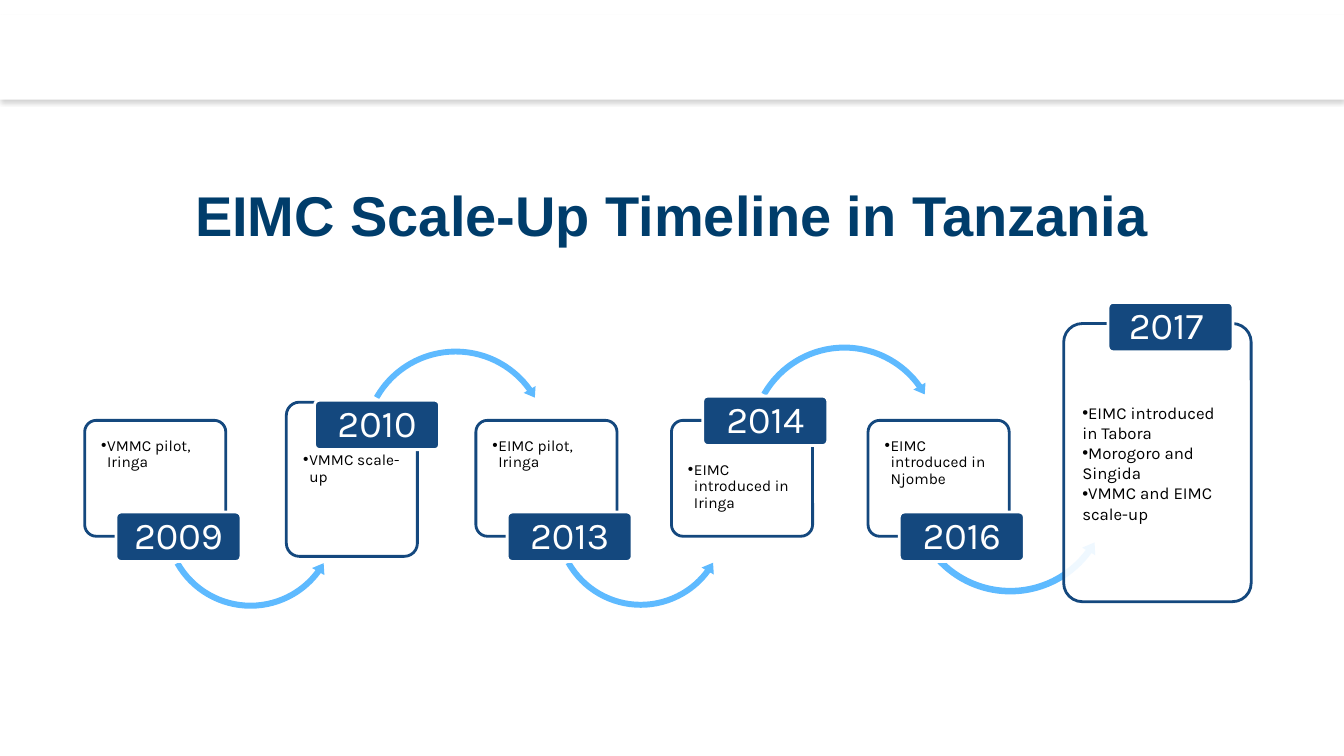
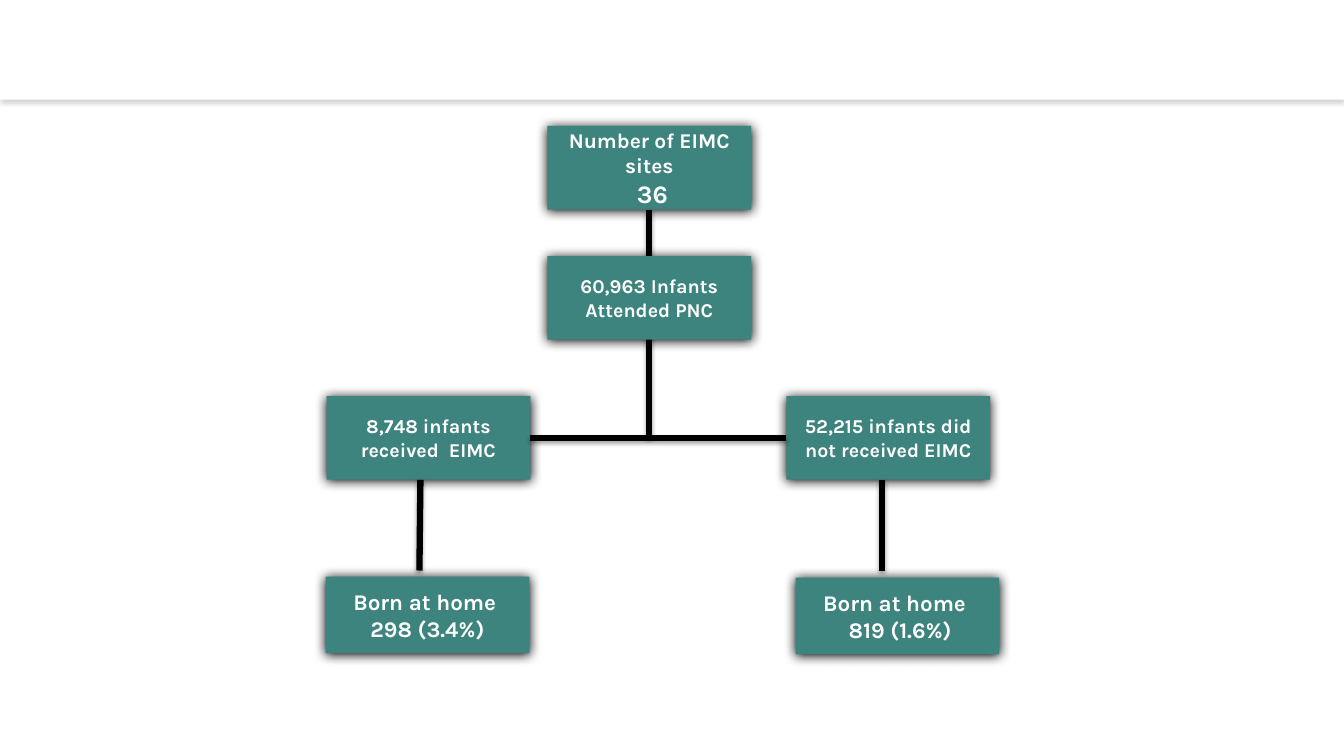
from dataclasses import dataclass
from typing import NamedTuple

from lxml.etree import SubElement
from pptx import Presentation
from pptx.dml.color import RGBColor
from pptx.enum.shapes import MSO_CONNECTOR, MSO_SHAPE
from pptx.enum.text import MSO_ANCHOR, PP_ALIGN
from pptx.oxml.ns import qn
from pptx.util import Inches, Pt


# Shared look
class Shade(NamedTuple):
    color: str
    alpha: int
    blur: float
    dist: float


@dataclass(frozen=True)
class Theme:
    white: str = "FFFFFF"
    black: str = "000000"
    navy: str = "14487E"
    sky: str = "5EBAFF"
    teal: str = "3C847D"
    head: str = "003D6B"
    font: str = "Karla"
    title_font: str = "Arial"
    title: int = 40
    year: int = 27
    note: int = 11
    rule: float = 4.5
    edge: float = 2
    soft: Shade = Shade("808080", 35, 3.1, 1.8)
    line: Shade = Shade("000000", 35, 3.1, 1.8)
    deep: Shade = Shade("000000", 100, 8.5, 1)


THEME = Theme()


class Box(NamedTuple):
    left: float
    top: float
    width: float
    height: float


class Para(NamedTuple):
    text: str
    size: float


# Timeline data
class Arrow(NamedTuple):
    left: float
    top: float
    size: float
    kind: MSO_SHAPE
    adj: tuple[float, ...]


class Event(NamedTuple):
    year: str
    notes: tuple[str, ...]
    card: Box
    tag: tuple[float, float]
    arrow: Arrow | None = None
    pad: float = 0.14
    size: float = THEME.note
    hang: float = 0.06
    space: float = 0.9


UNDER, OVER = MSO_SHAPE.LEFT_CIRCULAR_ARROW, MSO_SHAPE.CIRCULAR_ARROW
DIP = (0.033, 4.091, 21.86, 90.26, 0.039)
LAST_DIP = (0.031, 3.809, 21.763, 90.444, 0.036)
RISE = (0.03, 3.643, 194.62, 125.77, 0.035)

EVENTS = (
    Event("2009", ("VMMC pilot, Iringa",), Box(0.84, 4.17, 1.4, 1.15),
          (1.15, 5.08), Arrow(1.58, 4.27, 1.81, UNDER, DIP)),
    Event("2010", ("VMMC scale-up",), Box(2.84, 3.99, 1.3, 1.53),
          (3.12, 3.97), Arrow(3.55, 3.42, 1.94, OVER, RISE), pad=0.46),
    Event("2013", ("EIMC pilot, Iringa",), Box(4.72, 4.17, 1.4, 1.15),
          (5.03, 5.08), Arrow(5.46, 4.28, 1.79, UNDER, DIP)),
    Event("2014", ("EIMC introduced in Iringa",), Box(6.66, 4.17, 1.4, 1.15),
          (6.97, 3.93), Arrow(7.39, 3.38, 1.97, OVER, RISE), pad=0.38),
    Event("2016", ("EIMC introduced in Njombe",), Box(8.61, 4.17, 1.4, 1.15),
          (8.92, 5.08), Arrow(8.98, 3.86, 2.08, UNDER, LAST_DIP)),
    Event("2017", ("EIMC introduced in Tabora", "Morogoro and Singida",
                   "VMMC and EIMC scale-up"), Box(10.55, 3.21, 1.86, 2.76),
          (10.99, 3), pad=0.73, size=12, hang=0, space=1),
)


# Drawing helpers
def rgb(color: str) -> RGBColor:
    return RGBColor.from_string(color)


def apply(item, values: dict) -> None:
    for name, value in values.items():
        setattr(item, name, value)


def add_shade(props, shade: Shade) -> None:
    """Put an outer shadow, cast straight down, in shape properties."""
    effects = props.find(qn("a:effectLst"))
    if effects is None:
        effects = SubElement(props, qn("a:effectLst"))
    outer = SubElement(effects, qn("a:outerShdw"), {
        "blurRad": str(Pt(shade.blur)), "dist": str(Pt(shade.dist)),
        "dir": "5400000", "algn": "ctr", "rotWithShape": "0"})
    color = SubElement(outer, qn("a:srgbClr"), val=shade.color)
    SubElement(color, qn("a:alpha"), val=str(shade.alpha * 1000))


def add_box(slide, kind: MSO_SHAPE, box: Box, fill: str,
            edge: str | None = None, shade: Shade | None = None,
            alpha: int | None = None):
    shape = slide.shapes.add_shape(kind, *map(Inches, box))
    shape.shadow.inherit = False
    shape.fill.solid()
    shape.fill.fore_color.rgb = rgb(fill)
    if alpha is not None:
        color = shape.fill._xPr.find(qn("a:solidFill"))[0]
        SubElement(color, qn("a:alpha"), val=str(alpha * 1000))
    if edge:
        shape.line.color.rgb = rgb(edge)
        shape.line.width = Pt(THEME.edge)
    else:
        shape.line.fill.background()
    if shade:
        add_shade(shape._element.spPr, shade)
    return shape


def set_text(shape, paras: list[Para], color: str, frame: dict,
             form: dict, font: dict, hang: float | None = None) -> None:
    text = shape.text_frame
    apply(text, {"word_wrap": True} | frame)
    for i, item in enumerate(paras):
        para = text.add_paragraph() if i else text.paragraphs[0]
        if hang is not None:
            props = para._p.get_or_add_pPr()
            props.set("marL", str(Inches(hang)))
            props.set("indent", str(-Inches(hang)))
            SubElement(props, qn("a:buFont"), typeface=THEME.title_font)
            SubElement(props, qn("a:buChar"), char="•")
        apply(para, form)
        run = para.add_run()
        run.text = item.text
        apply(run.font, {"name": THEME.font, "size": Pt(item.size)} | font)
        run.font.color.rgb = rgb(color)


def insets(side: float, top: float, bottom: float) -> dict:
    return {"margin_left": Inches(side), "margin_right": Inches(side),
            "margin_top": Inches(top), "margin_bottom": Inches(bottom)}


def add_page(deck, layout: int):
    slide = deck.slides.add_slide(deck.slide_layouts[layout])
    add_box(slide, MSO_SHAPE.RECTANGLE, Box(0, 0.15, 13.33, 0.84),
            THEME.white, shade=THEME.soft)
    return slide


def add_event(slide, event: Event) -> None:
    card = add_box(slide, MSO_SHAPE.ROUNDED_RECTANGLE, event.card,
                   THEME.white, THEME.navy, alpha=90)
    card.adjustments[0] = 0.1
    set_text(card, [Para(note, event.size) for note in event.notes],
             THEME.black,
             insets(0.13, event.pad, 0.14) | {"vertical_anchor": MSO_ANCHOR.TOP},
             {"alignment": PP_ALIGN.LEFT, "line_spacing": event.space},
             {}, event.hang)
    if event.arrow:
        left, top, size, kind, adj = event.arrow
        arrow = add_box(slide, kind, Box(left, top, size, size), THEME.sky)
        for i, value in enumerate(adj):
            arrow.adjustments[i] = value
    tag = add_box(slide, MSO_SHAPE.ROUNDED_RECTANGLE,
                  Box(*event.tag, 1.24, 0.49), THEME.navy, THEME.white)
    tag.adjustments[0] = 0.1
    # The last year carries a trailing space, which shifts it left
    year = event.year if event.arrow else event.year + " "
    set_text(tag, [Para(year, THEME.year)], THEME.white,
             insets(0.06, 0.04, 0.04) | {"vertical_anchor": MSO_ANCHOR.MIDDLE},
             {"alignment": PP_ALIGN.CENTER, "line_spacing": 0.9}, {})


def add_node(slide, left: float, top: float, *paras: Para,
             height: float = 0.83):
    node = add_box(slide, MSO_SHAPE.RECTANGLE, Box(left, top, 2.02, height),
                   THEME.teal, shade=THEME.deep)
    set_text(node, list(paras), THEME.white,
             {"vertical_anchor": MSO_ANCHOR.MIDDLE},
             {"alignment": PP_ALIGN.CENTER}, {"bold": True})
    return node


def add_rule(slide, x1: float, y1: float, x2: float, y2: float):
    rule = slide.shapes.add_connector(
        MSO_CONNECTOR.STRAIGHT, *map(Inches, (x1, y1, x2, y2)))
    rule.line.color.rgb = rgb(THEME.black)
    rule.line.width = Pt(THEME.rule)
    add_shade(rule._element.spPr, THEME.line)
    return rule


# Slides
def add_timeline(deck) -> None:
    slide = add_page(deck, 5)
    for event in EVENTS:
        add_event(slide, event)
    title = slide.shapes.title
    apply(title, {"left": Inches(0.66), "top": Inches(1.5),
                  "width": Inches(12), "height": Inches(1.25)})
    set_text(title, [Para("EIMC Scale-Up Timeline in Tanzania", THEME.title)],
             THEME.head, {"vertical_anchor": MSO_ANCHOR.MIDDLE},
             {"alignment": PP_ALIGN.CENTER},
             {"name": THEME.title_font, "bold": True})


def add_flow(deck) -> None:
    slide = add_page(deck, 6)
    add_node(slide, 3.23, 5.72, Para("Born at home ", 16),
             Para("298 (3.4%)", 16), height=0.76)
    add_node(slide, 7.89, 5.73, Para("Born at home ", 16),
             Para(" 819 (1.6%)", 16), height=0.76)
    sites = add_node(slide, 5.43, 1.25, Para("Number of EIMC sites", 15),
                     Para(" 36", 18))
    done = add_node(slide, 3.24, 3.93, Para("8,748 infants received  EIMC", 14))
    missed = add_node(slide, 7.8, 3.93,
                      Para("52,215 infants did not received EIMC", 14))

    # Lines; the trunk runs behind the middle box
    for top, foot in ((4.17, 4.16), (8.75, 8.75)):
        add_rule(slide, top, 4.76, foot, 5.66)
    trunk = add_rule(slide, 6.44, 2.08, 6.44, 4.34)
    trunk.begin_connect(sites, 2)
    branch = add_rule(slide, 7.8, 4.34, 5.26, 4.34)
    branch.begin_connect(missed, 1)
    branch.end_connect(done, 3)
    add_node(slide, 5.43, 2.54, Para("60,963 Infants Attended PNC", 14))


def main() -> None:
    deck = Presentation()
    apply(deck, {"slide_width": Inches(13.33), "slide_height": Inches(7.5)})
    add_timeline(deck)
    add_flow(deck)
    deck.save("out.pptx")


if __name__ == "__main__":
    main()
